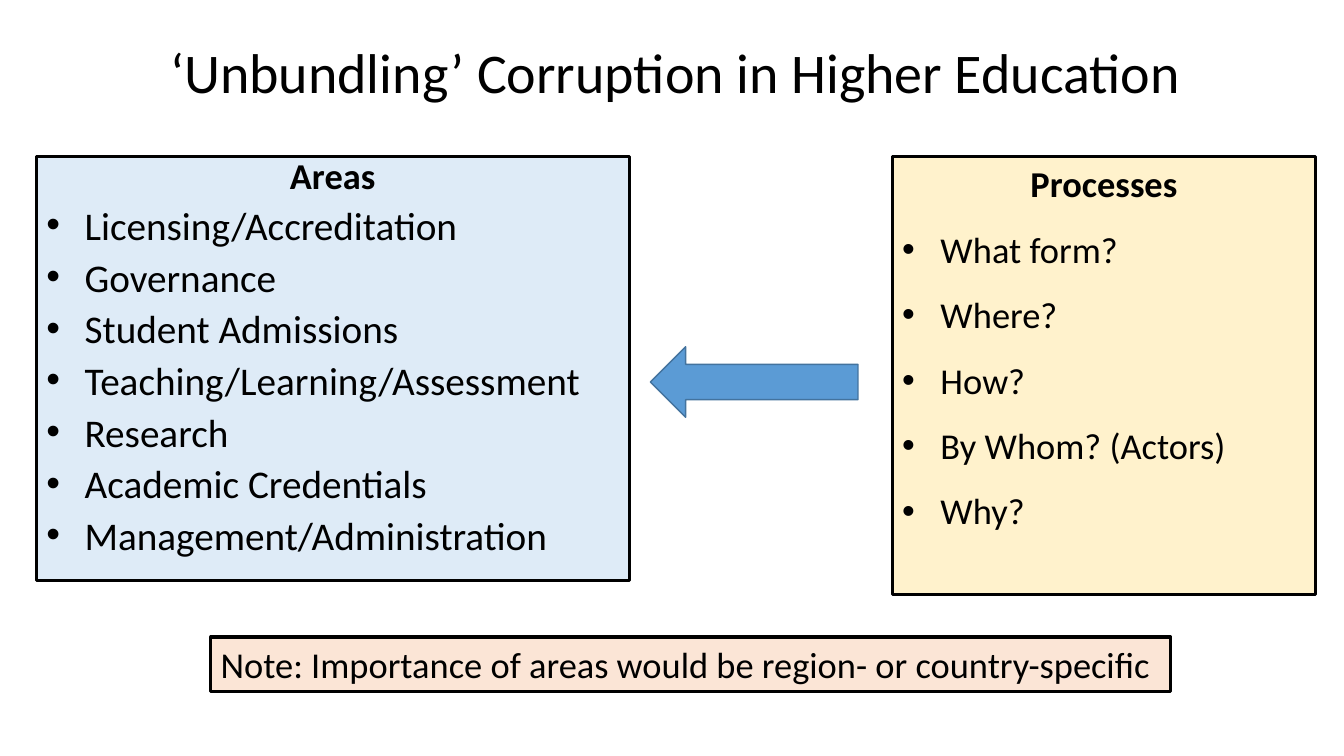
from lxml import etree
from pptx import Presentation
from pptx.dml.color import RGBColor
from pptx.enum.shapes import MSO_SHAPE
from pptx.enum.text import MSO_ANCHOR, MSO_AUTO_SIZE, PP_ALIGN
from pptx.oxml.ns import qn
from pptx.util import Emu, Pt

RECTANGLE = MSO_SHAPE.RECTANGLE
LEFT_ARROW = MSO_SHAPE.LEFT_ARROW
TOP, BOTTOM = MSO_ANCHOR.TOP, MSO_ANCHOR.BOTTOM
LEFT, CENTER = PP_ALIGN.LEFT, PP_ALIGN.CENTER
NO_FIT = MSO_AUTO_SIZE.NONE

PX_PER_INCH = 100
FONT = "Calibri"
BLACK = "000000"

AREAS = [
    "Licensing/Accreditation",
    "Governance",
    "Student Admissions",
    "Teaching/Learning/Assessment",
    "Research",
    "Academic Credentials",
    "Management/Administration",
]
PROCESSES = ["What form?", "Where?", "How?", "By Whom? (Actors)", "Why?"]


def px(length):
    return Emu(length * 914400 // PX_PER_INCH)


def color(value):
    return RGBColor.from_string(value)


def place(box, left, top, width, height):
    box.left, box.top = px(left), px(top)
    box.width, box.height = px(width), px(height)


def paint(box, fill, line=BLACK, line_width=2.25):
    box.fill.solid()
    box.fill.fore_color.rgb = color(fill)
    box.line.color.rgb = color(line)
    box.line.width = Pt(line_width)


def add_box(page, kind, bounds, fill, line=BLACK, line_width=2.25):
    box = page.shapes.add_shape(kind, *map(px, bounds))
    box.shadow.inherit = False
    paint(box, fill, line, line_width)
    return box


def prepare_frame(box, anchor):
    frame = box.text_frame
    frame.word_wrap = True
    frame.auto_size = NO_FIT
    frame.vertical_anchor = anchor
    return frame


def style_para(para, size, align=LEFT, bold=False, spacing=1.0, before=0):
    para.alignment = align
    para.line_spacing = spacing
    para.space_before = Pt(before)
    for span in para.runs:
        span.font.name = FONT
        span.font.size = Pt(size)
        span.font.bold = bold
        span.font.color.rgb = color(BLACK)


def add_bullet(para):
    properties = para._p.get_or_add_pPr()
    properties.set("marL", str(px(38)))
    properties.set("indent", str(-px(38)))
    etree.SubElement(properties, qn("a:buFont")).set("typeface", "Arial")
    etree.SubElement(properties, qn("a:buChar")).set("char", "•")


def write_line(box, text, size, anchor, align=LEFT, spacing=1.0):
    frame = prepare_frame(box, anchor)
    frame.text = text
    style_para(frame.paragraphs[0], size, align, spacing=spacing)


def write_list(box, heading, items, size, heading_spacing, spacing, before=0):
    frame = prepare_frame(box, TOP)
    frame.text = "\n".join([heading, *items])
    title, *bullets = frame.paragraphs
    style_para(title, 26, CENTER, True, heading_spacing, before)
    for para in bullets:
        style_para(para, size, spacing=spacing, before=before)
        add_bullet(para)


def main():
    deck = Presentation()
    deck.slide_width, deck.slide_height = px(1333), px(750)
    page = deck.slides.add_slide(deck.slide_layouts[0])

    title = page.shapes.title
    place(title, 36, 14, 1280, 96)
    write_line(title, "‘Unbundling’ Corruption in Higher Education ", 40, BOTTOM, CENTER, 0.9)

    areas = page.placeholders[1]
    place(areas, 36, 155, 588, 421)
    paint(areas, "DEEBF7")
    write_list(areas, "Areas", AREAS, 28, 0.8, 0.8, 10)

    processes = add_box(page, RECTANGLE, (885, 155, 420, 435), "FFF2CC")
    write_list(processes, "Processes", PROCESSES, 26, 1.0, 1.5)

    add_box(page, LEFT_ARROW, (645, 344, 206, 70), "5B9BD5", "43739E", 1)

    note = add_box(page, RECTANGLE, (209, 632, 952, 54), "FBE5D6")
    write_line(note, "Note: Importance of areas would be region- or country-specific", 26, TOP)

    deck.save("out.pptx")


if __name__ == "__main__":
    main()
